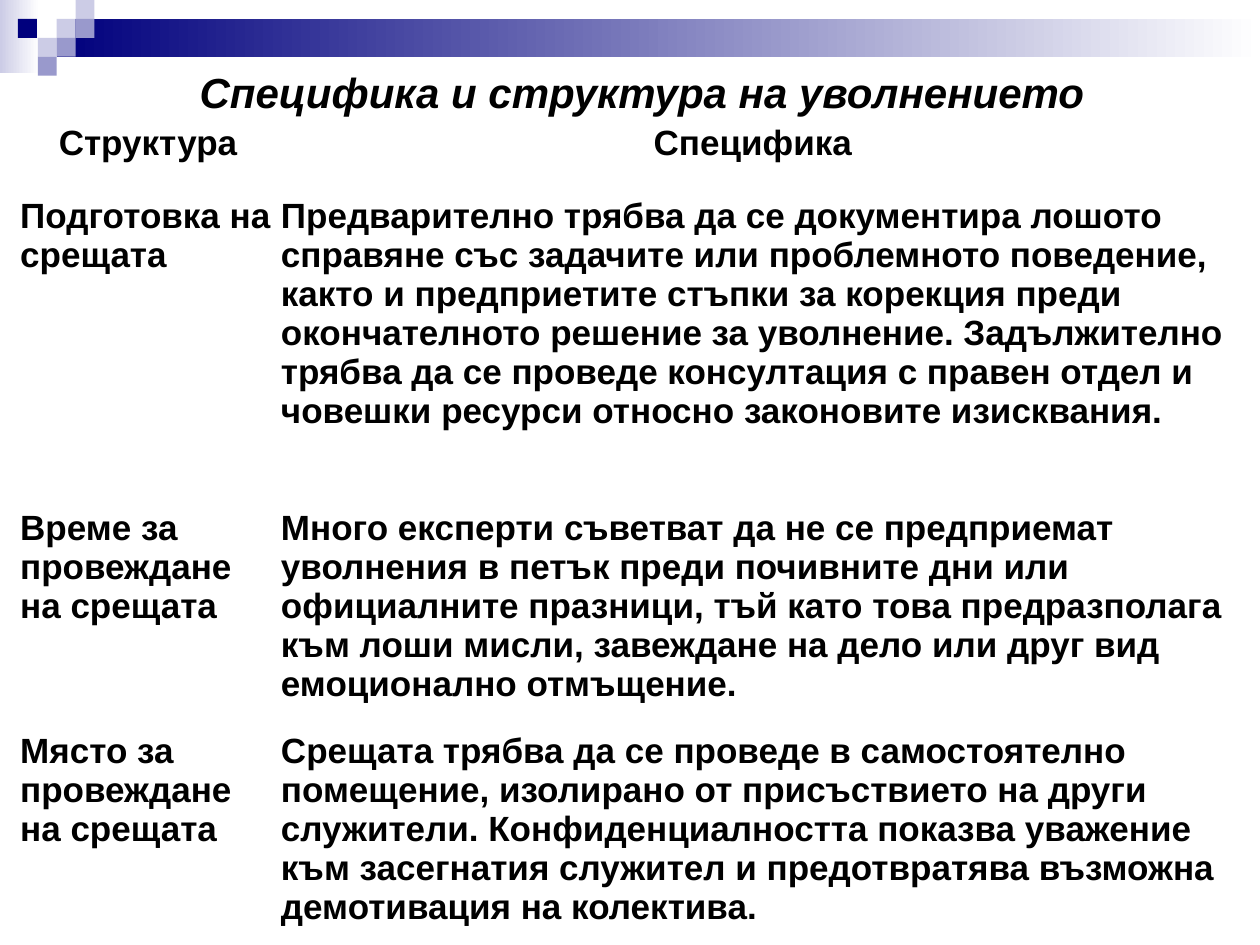
from dataclasses import dataclass
from lxml.etree import SubElement
from pptx import Presentation
from pptx.dml.color import RGBColor
from pptx.enum.shapes import MSO_SHAPE
from pptx.enum.text import MSO_AUTO_SIZE, PP_ALIGN
from pptx.oxml.ns import qn
from pptx.slide import Slide
from pptx.util import Inches, Pt

NAVY, LILAC, PERIWINKLE, WHITE, BLACK = "00007D", "CCCCE6", "9999CC", "FFFFFF", "000000"

SQUARES = [
    (3, 1, LILAC), (4, 0, LILAC), (4, 1, PERIWINKLE), (2, 2, LILAC),
    (0.95, 1, NAVY), (3, 2, PERIWINKLE), (2, 3, PERIWINKLE),
]

ROWS = [
    ("Структура", "Специфика"),
    (
        "Подготовка на срещата",
        "Предварително трябва да се документира лошото справяне със задачите "
        "или проблемното поведение, както и предприетите стъпки за корекция "
        "преди окончателното решение за уволнение. Задължително трябва да се "
        "проведе консултация с правен отдел и човешки ресурси относно "
        "законовите изисквания.",
    ),
    (
        "Време за провеждане на срещата",
        "Много експерти съветват да не се предприемат уволнения в петък преди "
        "почивните дни или официалните празници, тъй като това предразполага "
        "към лоши мисли, завеждане на дело или друг вид емоционално отмъщение.",
    ),
    (
        "Място за провеждане на срещата",
        "Срещата трябва да се проведе в самостоятелно помещение, изолирано от "
        "присъствието на други служители. Конфиденциалността показва уважение "
        "към засегнатия служител и предотвратява възможна демотивация на "
        "колектива.",
    ),
]


def color(code):
    """Turn a hex string into a colour."""
    return RGBColor.from_string(code)


@dataclass
class Painter:
    """Holds the style and the current slide; lengths are in grid cells."""

    page: Slide
    cell_size: float = 0.15
    font: str = "Arial"
    ink: str = BLACK

    def grid(self, *cells):
        """Turn counts of grid cells into lengths."""
        return [Inches(count * self.cell_size) for count in cells]

    def block(self, left, top, width, height, fill, fade=None):
        """Draw a borderless rectangle, plain or fading to the right."""
        box = self.page.shapes.add_shape(
            MSO_SHAPE.RECTANGLE, *self.grid(left, top, width, height))
        box.shadow.inherit = False
        box.line.fill.background()
        if fade:
            box.fill.gradient()
            box.fill.gradient_angle = 0
            for stop, code in zip(box.fill.gradient_stops, (fill, fade)):
                stop.color.rgb = color(code)
        else:
            box.fill.solid()
            box.fill.fore_color.rgb = color(fill)

    def add_text(self, para, text, size, align, italic=False):
        """Add one bold run to a paragraph."""
        para.alignment = align
        span = para.add_run()
        span.text = text
        span.font.name, span.font.size = self.font, Pt(size)
        span.font.bold, span.font.italic = True, italic
        span.font.color.rgb = color(self.ink)

    def title(self, text, left, top, width, height):
        """Place the centred slide title."""
        box = self.page.shapes.add_textbox(*self.grid(left, top, width, height))
        box.text_frame.word_wrap = True
        box.text_frame.auto_size = MSO_AUTO_SIZE.SHAPE_TO_FIT_TEXT
        self.add_text(box.text_frame.paragraphs[0], text, 24, PP_ALIGN.CENTER, True)

    def border(self, cell, side, width):
        """Give one side of a table cell a white line."""
        line = SubElement(cell._tc.get_or_add_tcPr(), qn(f"a:ln{side}"), w=str(Pt(width)))
        paint = SubElement(line, qn("a:solidFill"))
        SubElement(paint, qn("a:srgbClr"), val=WHITE)

    def table(self, rows, left, top, widths, heights):
        """Place the table with a centred heading row."""
        frame = self.page.shapes.add_table(
            len(rows), len(widths), *self.grid(left, top, sum(widths), sum(heights)))
        table = frame.table
        table.first_row = table.horz_banding = False
        for column, width in zip(table.columns, self.grid(*widths)):
            column.width = width
        for row, height in zip(table.rows, self.grid(*heights)):
            row.height = height
        for index, texts in enumerate(rows):
            for cell, text in zip(table.rows[index].cells, texts):
                self.fill_cell(cell, text, index == 0, index == len(rows) - 1)

    def fill_cell(self, cell, text, heading, last):
        """Style one table cell and add its text."""
        cell.margin_left = cell.margin_right = cell.margin_top = cell.margin_bottom = 0
        for side, thick in (("L", False), ("R", False), ("T", last), ("B", heading)):
            self.border(cell, side, 3 if thick else 1)
        cell.fill.solid()
        cell.fill.fore_color.rgb = color(WHITE)
        para = cell.text_frame.paragraphs[0]
        para.space_before = para.space_after = Pt(1 if heading else 2)
        self.add_text(para, text, 20, PP_ALIGN.CENTER if heading else PP_ALIGN.LEFT)
        properties = para._p.get_or_add_pPr()
        properties.set("marL", str(Inches(0.04)))
        properties.set("indent", "0")


def main():
    """Build and save the deck."""
    deck = Presentation()
    deck.slide_width, deck.slide_height = Inches(10), Inches(7.5)
    painter = Painter(deck.slides.add_slide(deck.slide_layouts[6]))
    painter.block(0, 0, 2.07, 3.87, LILAC, WHITE)
    painter.block(3, 1, 63.67, 2, NAVY, WHITE)
    for column, row, fill in SQUARES:
        painter.block(column, row, 1, 1, fill)
    painter.table(ROWS, 0.8, 6.53, (13.8, 50.2), (3.87, 16.53, 11.8, 12.6))
    painter.title("Специфика и структура на уволнението", 3, 3.2, 61.93, 3.33)
    deck.save("out.pptx")


if __name__ == "__main__":
    main()
